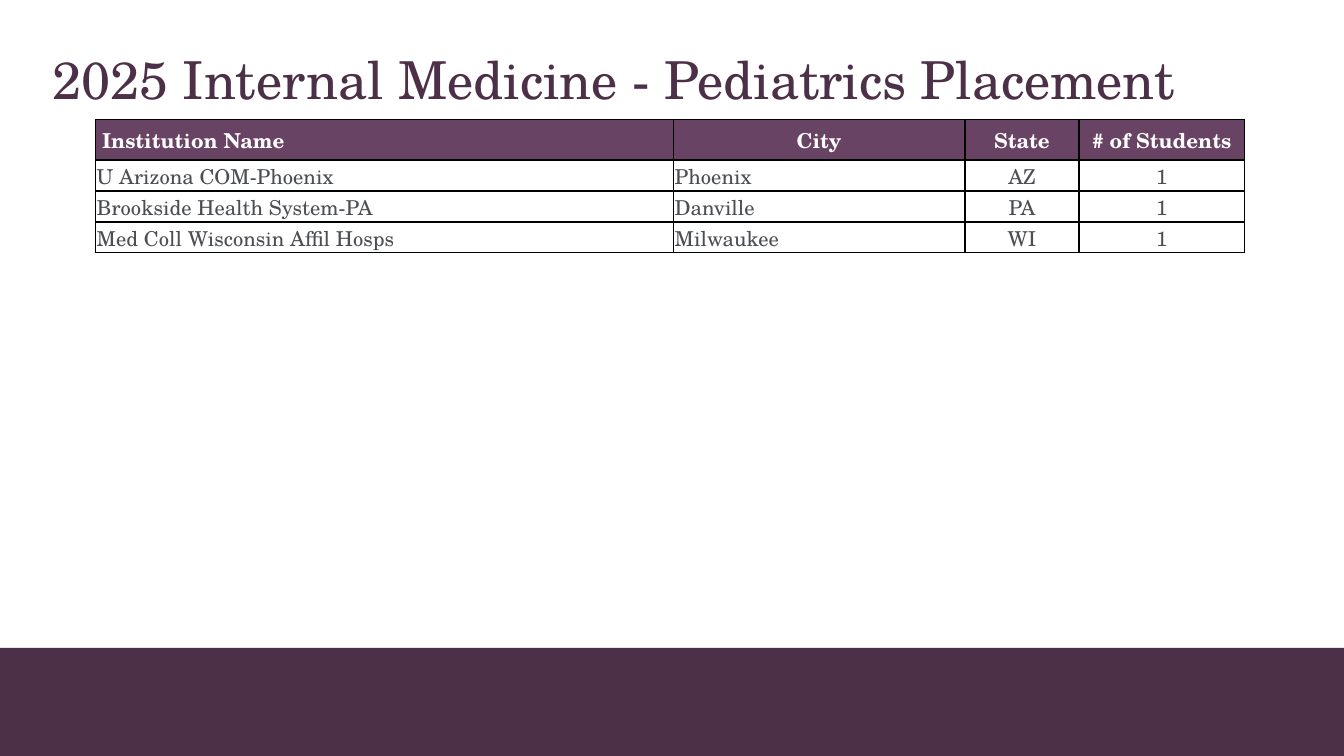
from lxml import etree
from pptx import Presentation
from pptx.dml.color import RGBColor
from pptx.enum.shapes import MSO_SHAPE
from pptx.enum.text import MSO_ANCHOR, PP_ALIGN
from pptx.oxml.ns import qn
from pptx.util import Inches, Pt

LEFT, CENTER = PP_ALIGN.LEFT, PP_ALIGN.CENTER
MIDDLE, BOTTOM = MSO_ANCHOR.MIDDLE, MSO_ANCHOR.BOTTOM
PLUM = RGBColor(0x4B, 0x30, 0x48)
HEADER_PLUM = RGBColor(0x69, 0x43, 0x64)
GRAY = RGBColor(0x4B, 0x4F, 0x54)
WHITE = RGBColor(0xFF, 0xFF, 0xFF)
FONT = "TeX Gyre Schola"

# Content
TITLE = "2025 Internal Medicine - Pediatrics Placement"
# Heading, width, heading alignment, body alignment, body anchor
COLUMNS = [
    ("Institution Name", 4.3, LEFT, LEFT, BOTTOM),
    ("City", 2.17, CENTER, LEFT, MIDDLE),
    ("State", 0.85, CENTER, CENTER, BOTTOM),
    ("# of Students", 1.23, CENTER, CENTER, BOTTOM),
]
PLACEMENTS = [
    ("U Arizona COM-Phoenix", "Phoenix", "AZ", "1"),
    ("Brookside Health System-PA", "Danville", "PA", "1"),
    ("Med Coll Wisconsin Affil Hosps", "Milwaukee", "WI", "1"),
]
HEADER_HEIGHT, ROW_HEIGHT = 0.3, 0.23

TITLE_FORMAT = {"name": FONT, "size": Pt(28)}
HEADER_FORMAT = {"name": FONT, "size": Pt(11), "bold": True}
BODY_FORMAT = {"name": FONT, "size": Pt(11), "bold": False}


def write(paragraph, text, font_format, color, alignment):
    run = paragraph.add_run()
    run.text = text
    paragraph.alignment = alignment
    for name, value in font_format.items():
        setattr(run.font, name, value)
    run.font.color.rgb = color


def add_borders(cell):
    properties = cell._tc.get_or_add_tcPr()
    for index, side in enumerate(("lnL", "lnR", "lnT", "lnB")):
        line = etree.Element(qn(f"a:{side}"), w=str(Pt(1)))
        fill = etree.SubElement(line, qn("a:solidFill"))
        etree.SubElement(fill, qn("a:srgbClr"), val="000000")
        properties.insert(index, line)


def fill_cell(cell, text, font_format, color, alignment, anchor, left=0.01):
    cell.vertical_anchor = anchor
    cell.margin_left = Inches(left)
    cell.margin_right = cell.margin_top = Inches(0.01)
    cell.margin_bottom = 0
    write(cell.text_frame.paragraphs[0], text, font_format, color, alignment)
    add_borders(cell)


# Widescreen slide, 16 to 9
presentation = Presentation()
presentation.slide_width = Inches(10)
presentation.slide_height = Inches(10) * 9 // 16
slide = presentation.slides.add_slide(presentation.slide_layouts[6])

# Bottom band
band = slide.shapes.add_shape(
    MSO_SHAPE.RECTANGLE, Inches(-0.06), Inches(4.82), Inches(10.12), Inches(0.81))
band.shadow.inherit = False
band.fill.solid()
band.fill.fore_color.rgb = PLUM
band.line.fill.background()

# Title
title = slide.shapes.add_textbox(Inches(0.29), Inches(0.29), Inches(9), Inches(0.59))
title.text_frame.word_wrap = True
title.text_frame.vertical_anchor = MIDDLE
write(title.text_frame.paragraphs[0], TITLE, TITLE_FORMAT, PLUM, LEFT)

# Placement table
table_width = sum(column[1] for column in COLUMNS)
table_height = HEADER_HEIGHT + ROW_HEIGHT * len(PLACEMENTS)
table = slide.shapes.add_table(
    len(PLACEMENTS) + 1, len(COLUMNS), Inches(0.71), Inches(0.89),
    Inches(table_width), Inches(table_height)).table
table.horz_banding = False
for index, row in enumerate(table.rows):
    row.height = Inches(ROW_HEIGHT if index else HEADER_HEIGHT)

for index, (heading, width, heading_align, body_align, anchor) in enumerate(COLUMNS):
    table.columns[index].width = Inches(width)
    header = table.cell(0, index)
    header.fill.solid()
    header.fill.fore_color.rgb = HEADER_PLUM
    fill_cell(header, heading, HEADER_FORMAT, WHITE, heading_align, MIDDLE,
              left=0.05 if heading_align == LEFT else 0.01)
    for row_number, placement in enumerate(PLACEMENTS, start=1):
        cell = table.cell(row_number, index)
        cell.fill.background()
        fill_cell(cell, placement[index], BODY_FORMAT, GRAY, body_align, anchor)

presentation.save("out.pptx")
